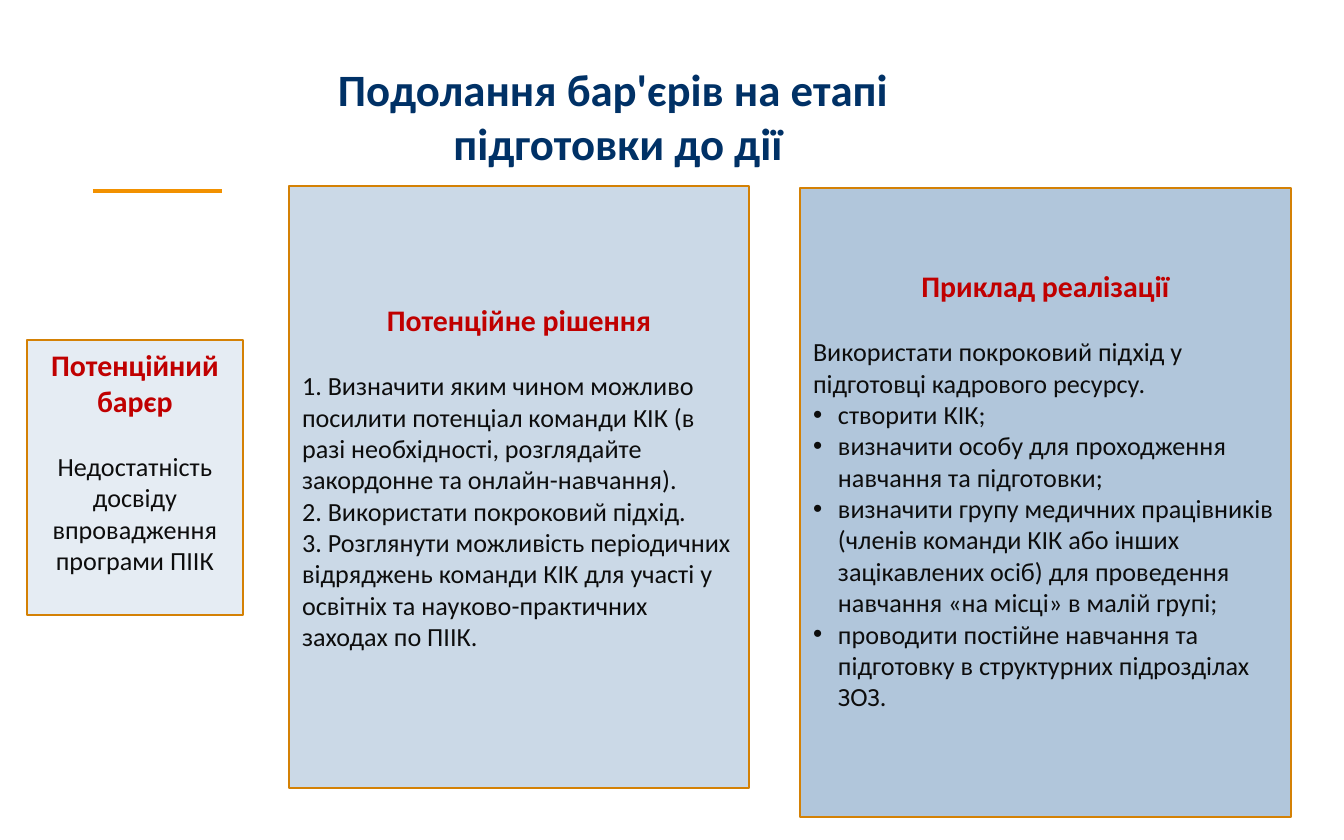
"""Builds the slide on overcoming barriers at the preparation stage."""
from lxml.etree import SubElement
from pptx import Presentation
from pptx.dml.color import RGBColor
from pptx.enum.shapes import MSO_CONNECTOR, MSO_SHAPE
from pptx.enum.text import MSO_ANCHOR as ANCHOR, MSO_AUTO_SIZE as AUTO, PP_ALIGN as ALIGN
from pptx.oxml.ns import qn
from pptx.util import Pt

NAVY = RGBColor(0x00, 0x31, 0x66)
RED = RGBColor(0xC0, 0x00, 0x00)
INK = RGBColor(0x0D, 0x0D, 0x0D)
ORANGE = RGBColor(0xF2, 0x91, 0x00)
BORDER = RGBColor(0xD4, 0x81, 0x05)
PALE = RGBColor(0xE5, 0xEC, 0xF3)
LIGHT = RGBColor(0xCB, 0xD9, 0xE7)
MEDIUM = RGBColor(0xB1, 0xC6, 0xDB)

FONT = "Calibri"
INSET_X, INSET_Y, INDENT = 13, 7, 25
HEADING_GAP = 17

TITLE = ["Подолання бар'єрів на етапі ", "підготовки до дії"]
TITLE_BOX = (134, 55, 968, 122)
RULE = (93, 191, 222, 191)

PANELS = [
    dict(box=(27, 340, 216, 275), fill=PALE, top=INSET_Y, align=ALIGN.CENTER,
         heading="Потенційний барєр",
         body=["Недостатність досвіду впровадження програми ПІІК"], bullets=[]),
    dict(box=(289, 186, 460, 602), fill=LIGHT, top=116, align=ALIGN.LEFT,
         heading="Потенційне рішення",
         body=["1. Визначити яким чином можливо посилити потенціал команди КІК "
               "(в разі необхідності, розглядайте закордонне та онлайн-навчання).",
               "2. Використати покроковий підхід.",
               "3. Розглянути можливість періодичних відряджень команди КІК для "
               "участі у освітніх та науково-практичних заходах по ПІІК."],
         bullets=[]),
    dict(box=(800, 188, 491, 629), fill=MEDIUM, top=80, align=ALIGN.LEFT,
         heading="Приклад реалізації",
         body=["Використати покроковий підхід у підготовці кадрового ресурсу."],
         bullets=["створити КІК;",
                  "визначити особу для проходження навчання та підготовки;",
                  "визначити групу медичних працівників (членів команди КІК або "
                  "інших зацікавлених осіб) для проведення навчання «на місці» "
                  "в малій групі;",
                  "проводити постійне навчання та підготовку в структурних "
                  "підрозділах ЗОЗ."]),
]


def px(n):
    return round(n * 914400 / 134.4)


def setup_frame(tf, top=INSET_Y):
    tf.word_wrap = True
    tf.auto_size = AUTO.NONE
    tf.vertical_anchor = ANCHOR.TOP
    tf.margin_left = tf.margin_right = px(INSET_X)
    tf.margin_top, tf.margin_bottom = px(top), px(INSET_Y)


def add_text(tf, text, size=14, color=INK, bold=False, align=ALIGN.LEFT,
             after=0, bullet=False):
    p = tf.paragraphs[0]
    if p.runs:
        p = tf.add_paragraph()
    p.alignment = align
    p.space_before, p.space_after = Pt(0), Pt(after)
    if bullet:
        pPr = p._p.get_or_add_pPr()
        pPr.set("marL", str(px(INDENT)))
        pPr.set("indent", str(-px(INDENT)))
        SubElement(pPr, qn("a:buFont"), typeface="Arial")
        SubElement(pPr, qn("a:buChar"), char="•")
    r = p.add_run()
    r.text = text
    r.font.name, r.font.size, r.font.bold = FONT, Pt(size), bold
    r.font.color.rgb = color


def add_panel(slide, box, fill, top, align, heading, body, bullets):
    sp = slide.shapes.add_shape(MSO_SHAPE.RECTANGLE, *map(px, box))
    sp.shadow.inherit = False
    sp.fill.solid()
    sp.fill.fore_color.rgb = fill
    sp.line.color.rgb = BORDER
    sp.line.width = Pt(0.75)
    tf = sp.text_frame
    setup_frame(tf, top)
    add_text(tf, heading, size=16, color=RED, bold=True, align=ALIGN.CENTER,
             after=HEADING_GAP)
    for text in body:
        add_text(tf, text, align=align)
    for text in bullets:
        add_text(tf, text, bullet=True)


def main():
    prs = Presentation()
    prs.slide_width, prs.slide_height = px(1344), px(840)
    s = prs.slides.add_slide(prs.slide_layouts[5])

    rule = s.shapes.add_connector(MSO_CONNECTOR.STRAIGHT, *map(px, RULE))
    rule.line.color.rgb = ORANGE
    rule.line.width = Pt(2)
    SubElement(rule._element.spPr, qn("a:effectLst"))

    title = s.shapes.title
    title.left, title.top, title.width, title.height = map(px, TITLE_BOX)
    setup_frame(title.text_frame)
    for text in TITLE:
        add_text(title.text_frame, text, size=24, color=NAVY, bold=True,
                 align=ALIGN.CENTER)

    for panel in PANELS:
        add_panel(s, **panel)
    prs.save("out.pptx")


if __name__ == "__main__":
    main()
